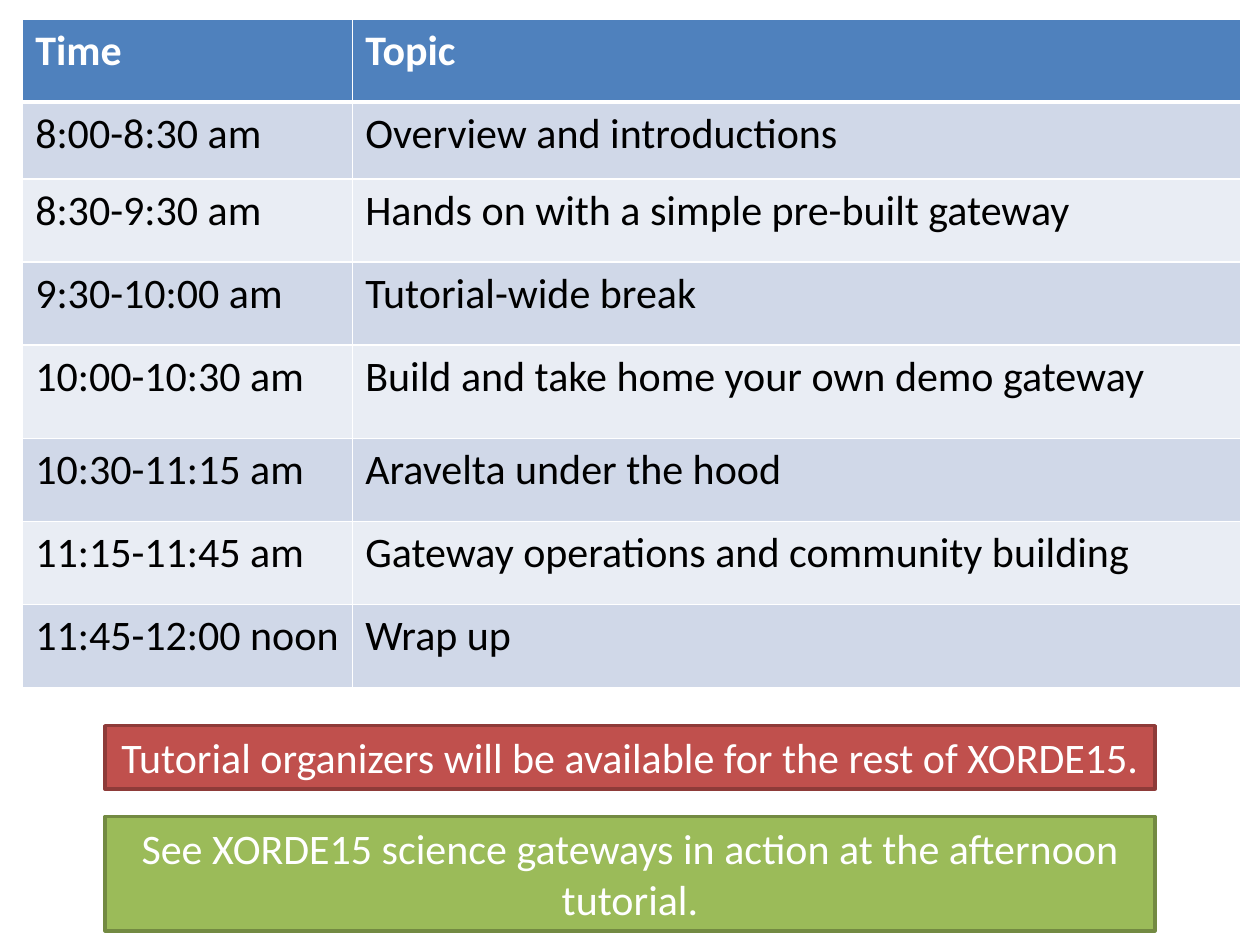
from lxml.etree import SubElement
from pptx import Presentation
from pptx.dml.color import RGBColor
from pptx.enum.shapes import MSO_SHAPE
from pptx.enum.text import MSO_ANCHOR, PP_ALIGN
from pptx.oxml.ns import qn
from pptx.util import Inches, Pt

WIDE, HIGH = 10, 7.5
COLS = [2.62, 7.05]
ROWS = [0.66, 0.61, 0.66, 0.66, 0.74, 0.66, 0.66, 0.66]
PLAN = [
    ("Time", "Topic"),
    ("8:00-8:30 am", "Overview and introductions"),
    ("8:30-9:30 am", "Hands on with a simple pre-built gateway"),
    ("9:30-10:00 am", "Tutorial-wide break"),
    ("10:00-10:30 am", "Build and take home your own demo gateway"),
    ("10:30-11:15 am", "Aravelta under the hood"),
    ("11:15-11:45 am", "Gateway operations and community building"),
    ("11:45-12:00 noon", "Wrap up"),
]
NOTES = [
    (0.768, 0.067, "C0504D", "8E3B39",
     "Tutorial organizers will be available for the rest of XORDE15."),
    (0.864, 0.121, "9BBB59", "738A42",
     "See XORDE15 science gateways in action at the afternoon tutorial."),
]


def paint(part, color):
    part.solid()
    part.fore_color.rgb = RGBColor.from_string(color)


def write(frame, text, color, bold=False, align=PP_ALIGN.LEFT):
    frame.text = text
    para = frame.paragraphs[0]
    para.alignment = align
    font = para.runs[0].font
    font.name, font.size, font.bold = "Calibri", Pt(24), bold
    paint(font.fill, color)


def edge(cell, side, width):
    props = cell._tc.get_or_add_tcPr()
    line = SubElement(props, qn(f"a:ln{side}"), w=str(Pt(width)))
    fill = SubElement(line, qn("a:solidFill"))
    SubElement(fill, qn("a:srgbClr"), val="FFFFFF")


def add_plan(slide):
    frame = slide.shapes.add_table(
        len(ROWS), len(COLS), Inches(0.18), Inches(0.15),
        Inches(sum(COLS)), Inches(sum(ROWS)))
    table = frame.table
    for col, width in zip(table.columns, COLS):
        col.width = Inches(width)
    for r, (row, high, texts) in enumerate(zip(table.rows, ROWS, PLAN)):
        row.height = Inches(high)
        head = r == 0
        shade = "4F81BD" if head else ("E9EDF4", "D0D8E8")[r % 2]
        for cell, text in zip(row.cells, texts):
            write(cell.text_frame, text, "FFFFFF" if head else "000000", head)
            for side in "LRTB":
                thick = (r, side) in ((0, "B"), (1, "T"))
                edge(cell, side, 3 if thick else 1)
            paint(cell.fill, shade)


def add_note(slide, top, high, fill, line, text):
    box = slide.shapes.add_shape(
        MSO_SHAPE.RECTANGLE, Inches(WIDE / 12), Inches(HIGH * top),
        Inches(WIDE * 10 / 12), Inches(HIGH * high))
    box.shadow.inherit = False
    paint(box.fill, fill)
    paint(box.line.fill, line)
    box.line.width = Pt(2)
    frame = box.text_frame
    frame.word_wrap = True
    frame.vertical_anchor = MSO_ANCHOR.TOP
    write(frame, text, "FFFFFF", align=PP_ALIGN.CENTER)


def main():
    deck = Presentation()
    deck.slide_width, deck.slide_height = Inches(WIDE), Inches(HIGH)
    slide = deck.slides.add_slide(deck.slide_layouts[6])
    add_plan(slide)
    for note in NOTES:
        add_note(slide, *note)
    deck.save("out.pptx")


if __name__ == "__main__":
    main()
